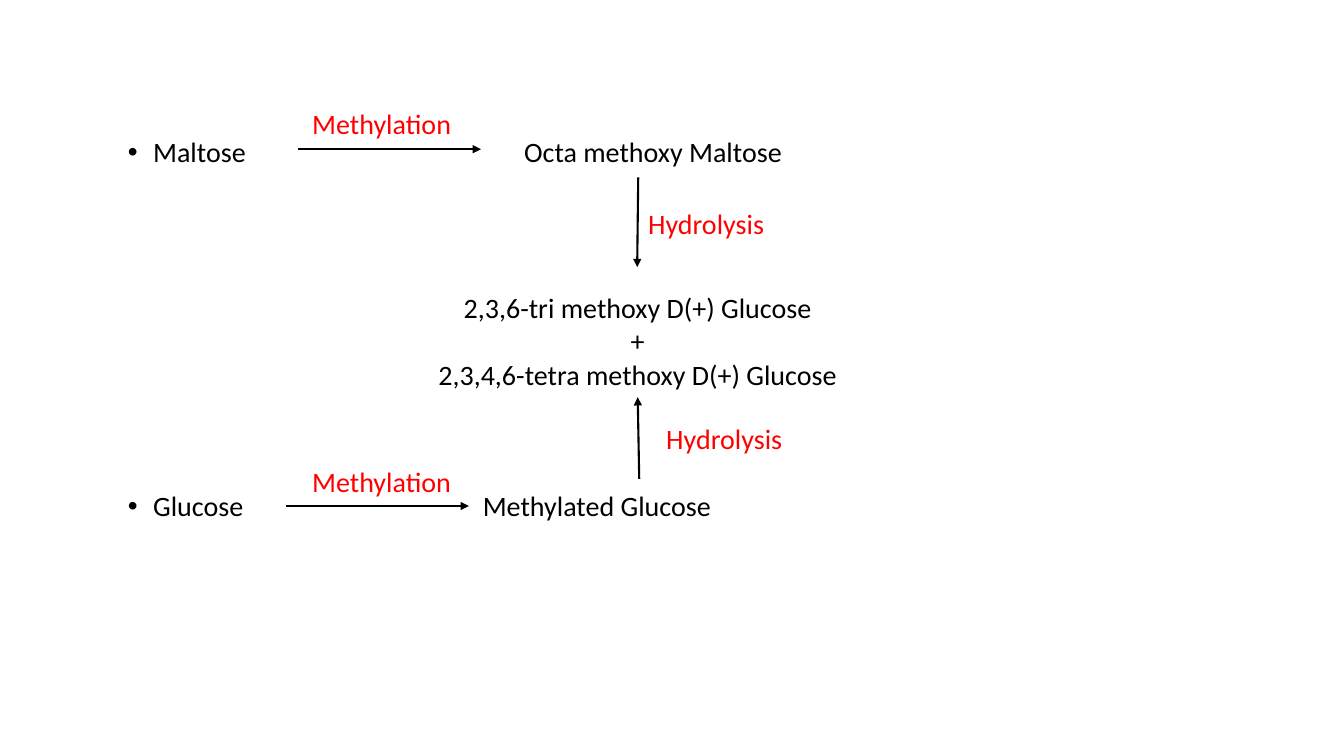
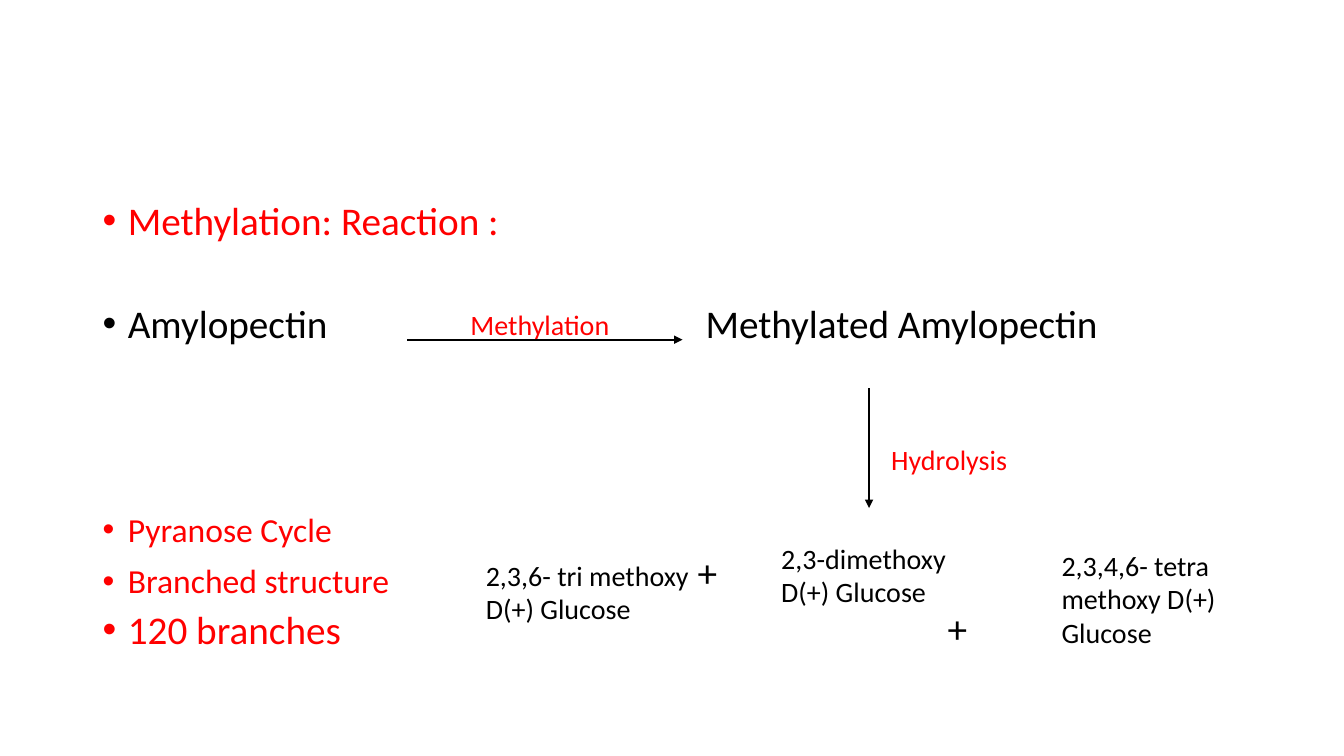
from dataclasses import dataclass
from typing import Optional

from lxml.etree import SubElement
from pptx import Presentation
from pptx.dml.color import RGBColor
from pptx.enum.shapes import MSO_CONNECTOR
from pptx.enum.text import MSO_AUTO_SIZE, PP_ALIGN
from pptx.oxml.ns import qn
from pptx.shapes.autoshape import Shape
from pptx.shapes.connector import Connector
from pptx.slide import Slide
from pptx.text.text import _Paragraph as Paragraph
from pptx.util import Inches, Pt

FONT = "Calibri"
BLACK = "000000"
RED = "FF0000"
BODY_SIZE = 20
LARGE_SIZE = 28
BULLET_INDENT = 0.25


@dataclass(frozen=True)
class Line:
    text: str
    size: int = BODY_SIZE
    color: str = BLACK
    bullet: bool = False


@dataclass(frozen=True)
class Label:
    left: float
    top: float
    width: float
    height: float
    lines: tuple[Line, ...]
    centered: bool = False
    pitch: Optional[float] = None


@dataclass(frozen=True)
class Arrow:
    x1: float
    y1: float
    x2: float
    y2: float


def rgb(value: str) -> RGBColor:
    return RGBColor.from_string(value)


def add_bullet(paragraph: Paragraph) -> None:
    properties = paragraph._p.get_or_add_pPr()
    properties.set("marL", str(Inches(BULLET_INDENT)))
    properties.set("indent", str(-Inches(BULLET_INDENT)))
    SubElement(properties, qn("a:buFont"), typeface="Arial")
    SubElement(properties, qn("a:buChar"), char="•")


def add_label(slide: Slide, label: Label) -> Shape:
    """Draw a text box; a pitch fixes the distance between its lines."""
    shape = slide.shapes.add_textbox(
        Inches(label.left), Inches(label.top), Inches(label.width), Inches(label.height)
    )
    frame = shape.text_frame
    frame.word_wrap = True
    frame.auto_size = MSO_AUTO_SIZE.SHAPE_TO_FIT_TEXT
    for index, line in enumerate(label.lines):
        paragraph = frame.add_paragraph() if index else frame.paragraphs[0]
        paragraph.text = line.text
        if line.bullet:
            add_bullet(paragraph)
        if label.centered:
            paragraph.alignment = PP_ALIGN.CENTER
        if label.pitch:
            paragraph.line_spacing = Inches(label.pitch)
        paragraph.font.name = FONT
        paragraph.font.size = Pt(line.size)
        paragraph.font.color.rgb = rgb(line.color)
    return shape


def add_arrow(slide: Slide, arrow: Arrow) -> Connector:
    connector = slide.shapes.add_connector(
        MSO_CONNECTOR.STRAIGHT,
        Inches(arrow.x1), Inches(arrow.y1), Inches(arrow.x2), Inches(arrow.y2),
    )
    connector.line.color.rgb = rgb(BLACK)
    connector.line.width = Pt(1.5)
    SubElement(connector.line._get_or_add_ln(), qn("a:tailEnd"), type="triangle")
    SubElement(connector._element.spPr, qn("a:effectLst"))
    return connector


def text_label(left: float, top: float, width: float, text: str,
               size: int = BODY_SIZE, height: float = 0.44) -> Label:
    return Label(left, top, width, height, (Line(text, size),))


def bullet_label(left: float, top: float, width: float, text: str,
                 size: int = BODY_SIZE, color: str = BLACK) -> Label:
    return Label(left, top, width, 0.44, (Line(text, size, color, bullet=True),))


def step_label(left: float, top: float, width: float, text: str,
               centered: bool = False) -> Label:
    """Describe the red name of a reaction step."""
    return Label(left, top, width, 0.44, (Line(text, color=RED),), centered)


def build_maltose_slide(slide: Slide) -> None:
    for label in (
        bullet_label(1.17, 1.29, 1.7, "Maltose"),
        text_label(5.1, 1.29, 3.2, "Octa methoxy Maltose"),
        bullet_label(1.17, 4.8, 1.65, "Glucose"),
        text_label(4.69, 4.8, 3, "Methylated Glucose"),
        step_label(2.88, 1.01, 1.81, "Methylation", centered=True),
        step_label(6.33, 2, 1.56, "Hydrolysis"),
        step_label(2.92, 4.56, 1.73, "Methylation", centered=True),
        step_label(6.51, 4.13, 1.56, "Hydrolysis"),
    ):
        add_label(slide, label)
    products = add_label(slide, Label(3.96, 2.83, 4.73, 1.11, (
        Line("2,3,6-tri methoxy D(+) Glucose"),
        Line("+"),
        Line("2,3,4,6-tetra methoxy D(+) Glucose"),
    ), centered=True))
    for arrow in (
        Arrow(2.96, 1.48, 4.77, 1.48),
        Arrow(6.33, 1.76, 6.32, 2.65),
        Arrow(2.84, 5.02, 4.65, 5.02),
    ):
        add_arrow(slide, arrow)
    glucose_hydrolysis = add_arrow(slide, Arrow(6.34, 4.75, 6.32, 3.94))
    glucose_hydrolysis.end_connect(products, 2)


def build_amylopectin_slide(slide: Slide) -> None:
    features = Label(0.92, 4.89, 3.6, 1.62, (
        Line("Pyranose Cycle", 24, RED, bullet=True),
        Line("Branched structure", 24, RED, bullet=True),
        Line("120 branches", LARGE_SIZE, RED, bullet=True),
    ), pitch=0.51)
    for label in (
        bullet_label(0.92, 1.9, 6, "Methylation: Reaction :", LARGE_SIZE, RED),
        bullet_label(0.92, 2.92, 3, "Amylopectin", LARGE_SIZE),
        text_label(6.9, 2.92, 4.6, "Methylated Amylopectin", LARGE_SIZE, 0.57),
        features,
        step_label(4.04, 3, 2.63, "Methylation", centered=True),
        step_label(8.74, 4.34, 2.63, "Hydrolysis"),
        text_label(4.72, 5.49, 2.3, "2,3,6- tri methoxy D(+) Glucose", height=0.77),
        text_label(6.82, 5.39, 0.5, "+", LARGE_SIZE, 0.57),
        text_label(7.65, 5.32, 2.24, "2,3-dimethoxy D(+) Glucose", height=0.77),
        text_label(9.3, 5.95, 0.5, "+", LARGE_SIZE, 0.57),
        text_label(10.43, 5.39, 1.89, "2,3,4,6- tetra methoxy D(+) Glucose", height=1.11),
    ):
        add_label(slide, label)
    for arrow in (Arrow(4.04, 3.37, 6.77, 3.37), Arrow(8.62, 3.85, 8.62, 5.04)):
        add_arrow(slide, arrow)


def main() -> None:
    presentation = Presentation()
    presentation.slide_width = Inches(13.33)
    presentation.slide_height = Inches(7.5)
    blank_layout = presentation.slide_layouts[6]
    for build_slide in (build_maltose_slide, build_amylopectin_slide):
        build_slide(presentation.slides.add_slide(blank_layout))
    presentation.save("out.pptx")


if __name__ == "__main__":
    main()
